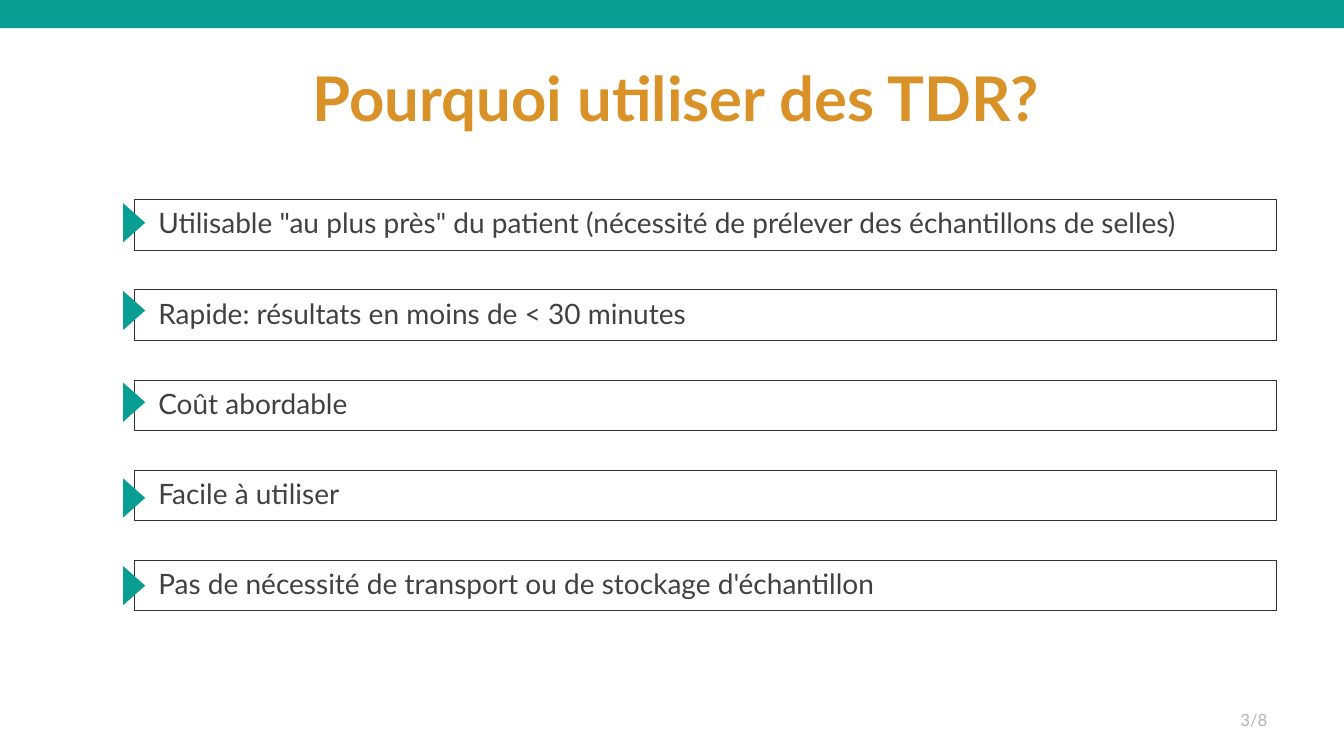
from pptx import Presentation
from pptx import util as u
from pptx.dml.color import RGBColor
from pptx.enum import shapes, text

TEAL, ORANGE, DARK, EDGE, GREY = "099E93", "D99228", "414141", "313131", "B3B3B3"
FONT = "Lato"

# Each reason with the height of its marker's centre
REASONS = [
    ('Utilisable "au plus près" du patient (nécessité de prélever des échantillons de selles)', 2.21),
    ("Rapide: résultats en moins de < 30 minutes", 3.08),
    ("Coût abordable", 3.99),
    ("Facile à utiliser", 4.94),
    ("Pas de nécessité de transport ou de stockage d'échantillon", 5.81),
]


def color(value):
    return RGBColor.from_string(value)


def write(sp, words, size, fill, align, inset=0.1, bold=False):
    tf = sp.text_frame
    tf.word_wrap = True
    tf.auto_size = text.MSO_AUTO_SIZE.NONE
    tf.vertical_anchor = text.MSO_ANCHOR.MIDDLE
    tf.margin_left = tf.margin_right = u.Inches(inset)
    tf.margin_top = tf.margin_bottom = 0
    p = tf.paragraphs[0]
    p.text = words
    p.alignment = align
    p.line_spacing = 0.9
    p.space_before = u.Pt(0)
    p.font.name, p.font.size, p.font.bold = FONT, u.Pt(size), bold
    p.font.color.rgb = color(fill)


def add_shape(s, kind, x, y, w, h, fill=None, line=None):
    sp = s.shapes.add_shape(kind, *map(u.Inches, (x, y, w, h)))
    sp.shadow.inherit = False
    if fill:
        sp.fill.solid()
        sp.fill.fore_color.rgb = color(fill)
    else:
        sp.fill.background()
    if line:
        sp.line.color.rgb = color(line)
        sp.line.width = u.Pt(0.5)
    else:
        sp.line.fill.background()
    return sp


def add_title(s, words, x, y, w, h):
    sp = s.shapes.title
    sp.left, sp.top, sp.width, sp.height = map(u.Inches, (x, y, w, h))
    write(sp, words, 44, ORANGE, text.PP_ALIGN.CENTER, bold=True)


def add_reasons(s, x, y, w, h, row_h=0.5, mark_w=0.22, mark_h=0.39):
    step = (h - row_h) / (len(REASONS) - 1)
    for i, (words, mark_y) in enumerate(REASONS):
        # Framed text
        sp = add_shape(s, shapes.MSO_SHAPE.RECTANGLE, x, y + i * step, w, row_h, line=EDGE)
        write(sp, words, 20, DARK, text.PP_ALIGN.LEFT, inset=0.24)
        # Marker centred on the left edge, turned to point right
        mark = add_shape(s, shapes.MSO_SHAPE.ISOSCELES_TRIANGLE,
                         x - mark_h / 2, mark_y - mark_w / 2, mark_h, mark_w, fill=TEAL)
        mark.rotation = 90


def add_page_number(s, words, x, y, w, h):
    sp = s.shapes.add_textbox(*map(u.Inches, (x, y, w, h)))
    write(sp, words, 12, GREY, text.PP_ALIGN.RIGHT)


def main():
    prs = Presentation()
    prs.slide_width, prs.slide_height = u.Inches(13.33), u.Inches(7.5)
    s = prs.slides.add_slide(prs.slide_layouts[5])  # Title Only

    # Top band
    add_shape(s, shapes.MSO_SHAPE.RECTANGLE, 0, 0, 13.33, 0.28, fill=TEAL)
    add_title(s, "Pourquoi utiliser des TDR?", 0.96, 0.28, 11.5, 1.45)
    add_reasons(s, 1.33, 1.98, 11.33, 4.08)
    add_page_number(s, "3/8", 9.67, 6.95, 3, 0.4)
    prs.save("out.pptx")


if __name__ == "__main__":
    main()
